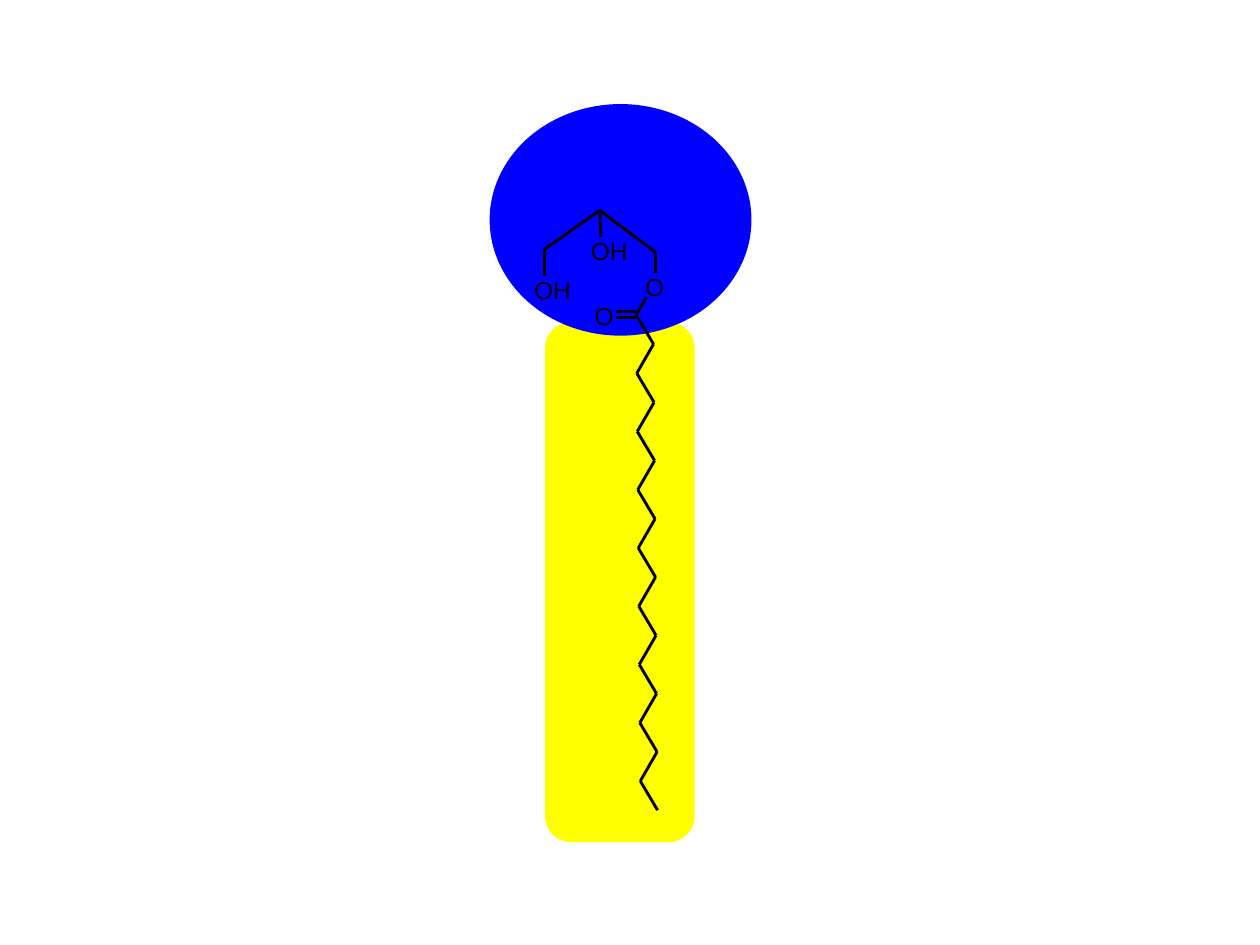
from itertools import pairwise

from lxml import etree
from pptx import Presentation
from pptx.dml.color import RGBColor
from pptx.enum.shapes import MSO_CONNECTOR, MSO_SHAPE
from pptx.enum.text import MSO_AUTO_SIZE
from pptx.oxml.ns import qn
from pptx.util import Inches, Pt

COLORS = {"head": "0000FF", "tail": "FFFF00", "ink": "000000"}
FONT = "Arial"


def color(name):
    return RGBColor.from_string(COLORS[name])


def add_body(shapes, kind, box, name):
    s = shapes.add_shape(kind, *(Inches(v) for v in box))
    s.shadow.inherit = False
    s.fill.solid()
    s.fill.fore_color.rgb = color(name)
    s.line.color.rgb = color(name)
    s.line.width = Pt(2)


def add_atom(shapes, x, y, symbol):
    width = 0.24 if symbol == "O" else 0.23
    s = shapes.add_textbox(Inches(x), Inches(y), Inches(width), Inches(0.26))
    tf = s.text_frame
    tf.margin_left = tf.margin_right = tf.margin_top = tf.margin_bottom = 0
    tf.word_wrap = False
    tf.auto_size = MSO_AUTO_SIZE.SHAPE_TO_FIT_TEXT
    r = tf.paragraphs[0].add_run()
    r.text = symbol
    r.font.name = FONT
    r.font.size = Pt(14)
    r.font.color.rgb = color("ink")


def add_bond(shapes, start, end):
    c = shapes.add_connector(MSO_CONNECTOR.STRAIGHT,
                             *(Inches(v) for v in (*start, *end)))
    c.line.color.rgb = color("ink")
    c.line.width = Pt(1.63)
    etree.SubElement(c._element.spPr, qn("a:effectLst"))


def add_glycerol(shapes, box):
    """Glycerol and ester group, placed from the corner of the head."""
    left, top = box[:2]

    # Oxygen and hydroxyl labels
    for x, y, label in [(1.22, 1.32, "O"), (0.34, 1.34, "OH"),
                        (0.79, 1.03, "OH"), (0.82, 1.55, "O")]:
        for i, symbol in enumerate(label):
            add_atom(shapes, left + x + 0.15 * i, top + y, symbol)

    # Backbone, hydroxyl, ester and double bonds
    paths = [
        [(0.42, 1.35), (0.42, 1.14), (0.86, 0.83), (1.3, 1.16), (1.3, 1.33)],
        [(0.86, 0.83), (0.87, 1.04)],
        [(1.23, 1.52), (1.15, 1.66)],
        [(1.15, 1.63), (0.99, 1.63)],
        [(1.15, 1.68), (0.99, 1.68)],
    ]
    for path in paths:
        for start, end in pairwise((left + x, top + y) for x, y in path):
            add_bond(shapes, start, end)


def add_chain(shapes, box, bonds=17):
    """Zigzag carbon chain with a slight drift to the right."""
    left, top = box[0] + 0.71, box[1] - 0.07
    step = 3.93 / bonds
    points = [(left + 0.002 * i + 0.135 * (i % 2), top + step * i)
              for i in range(bonds + 1)]
    for start, end in pairwise(points):
        add_bond(shapes, start, end)


def add_lipid(slide, head, tail):
    shapes = slide.shapes.add_group_shape().shapes
    add_body(shapes, MSO_SHAPE.ROUNDED_RECTANGLE, tail, "tail")
    add_body(shapes, MSO_SHAPE.OVAL, head, "head")
    add_glycerol(shapes, head)
    add_chain(shapes, tail)


def main():
    prs = Presentation()
    prs.slide_width, prs.slide_height = Inches(10), Inches(7.5)
    slide = prs.slides.add_slide(prs.slide_layouts[6])
    add_lipid(slide, head=(3.9, 0.84, 2.05, 1.81), tail=(4.34, 2.57, 1.16, 4.1))
    prs.save("out.pptx")


if __name__ == "__main__":
    main()
